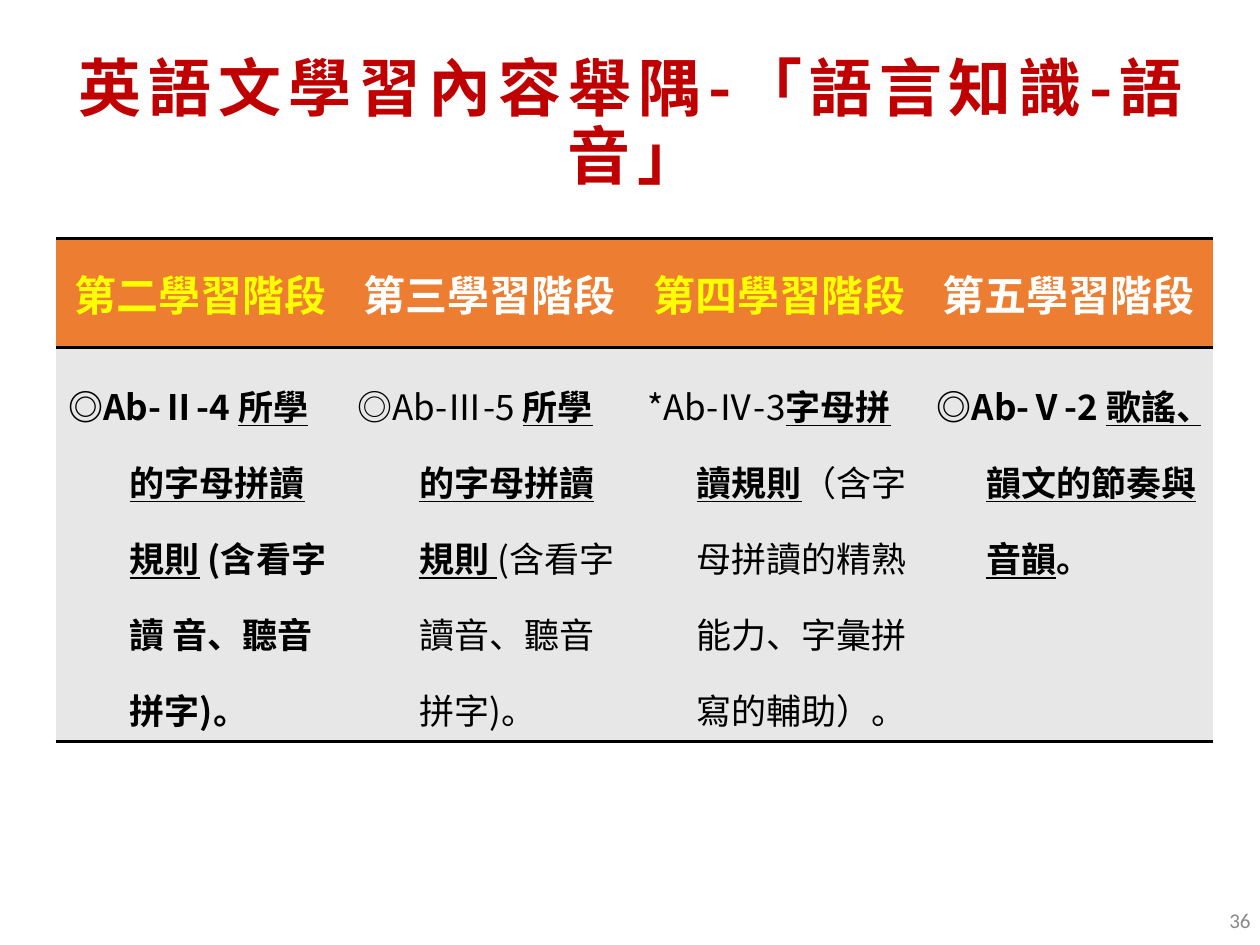
from dataclasses import dataclass

from lxml import etree
from pptx import Presentation
from pptx.dml.color import RGBColor
from pptx.enum.text import MSO_ANCHOR, MSO_AUTO_SIZE, PP_ALIGN
from pptx.oxml.ns import qn
from pptx.util import Cm, Pt

CENTER, RIGHT = PP_ALIGN.CENTER, PP_ALIGN.RIGHT
MIDDLE, NO_FIT = MSO_ANCHOR.MIDDLE, MSO_AUTO_SIZE.NONE
CJK = "Noto Sans CJK SC"
NO_STYLE = "{2D5ABB26-0587-4C30-8999-92F81FD0307C}"


@dataclass
class Stage:
    name: str
    color: str
    code: str
    key: str
    rest: str
    bold: bool
    indent: float


STAGES = [
    Stage("第二學習階段", "FFFF00", "◎Ab-Ⅱ-4 ", "所學的字母拼讀規則",
          " (含看字讀 音、聽音拼字)。", True, 1.24),
    Stage("第三學習階段", "FFFFFF", "◎Ab-Ⅲ-5 ", "所學的字母拼讀規則 ",
          "(含看字讀音、聽音拼字)。", False, 1.24),
    Stage("第四學習階段", "FFFF00", "*Ab-Ⅳ-3", "字母拼讀規則",
          "（含字母拼讀的精熟 能力、字彙拼寫的輔助）。", False, 1),
    Stage("第五學習階段", "FFFFFF", "◎Ab-Ⅴ-2 ", "歌謠、韻文的節奏與音韻",
          "。", True, 1),
]


def rgb(value: str) -> RGBColor:
    """Turn a hex string into a colour."""
    return RGBColor.from_string(value)


def add_text(p, text: str, size=20, color="000000", bold=False,
             underline=False, font=CJK, spacing=0) -> None:
    """Add one formatted run to a paragraph."""
    r = p.add_run()
    r.text = text
    f = r.font
    f.size, f.bold, f.underline, f.name = Pt(size), bold, underline, font
    f.color.rgb = rgb(color)
    rPr = r._r.get_or_add_rPr()
    etree.SubElement(rPr, qn("a:ea")).set("typeface", font)
    if spacing:
        rPr.set("spc", str(spacing * 100))


def format_cell(cell, fill: str, sides: tuple) -> None:
    """Draw black rules on the given sides, then fill the cell."""
    tcPr = cell._tc.get_or_add_tcPr()
    for side in sides:
        ln = etree.SubElement(tcPr, qn(f"a:ln{side}"), w=str(Pt(2)))
        solid = etree.SubElement(ln, qn("a:solidFill"))
        etree.SubElement(solid, qn("a:srgbClr"), val="000000")
    cell.fill.solid()
    cell.fill.fore_color.rgb = rgb(fill)


def add_title(s, text: str) -> None:
    """Place and format the title placeholder."""
    sp = s.shapes.title
    sp.left, sp.top, sp.width, sp.height = Cm(0.43), Cm(1.22), Cm(24.71), Cm(2.59)
    tf = sp.text_frame
    tf.auto_size, tf.vertical_anchor, tf.word_wrap = NO_FIT, MIDDLE, True
    p = tf.paragraphs[0]
    p.alignment, p.line_spacing, p.space_before = CENTER, 0.9, Pt(0)
    add_text(p, text, size=36, color="C00000", bold=True, spacing=4)


def add_stage(table, col: int, stage: Stage) -> None:
    """Fill one column with a learning stage."""
    head, body = table.cell(0, col), table.cell(1, col)
    format_cell(head, "ED7D31", ("T", "B"))
    head.vertical_anchor = MIDDLE
    p = head.text_frame.paragraphs[0]
    p.alignment = CENTER
    add_text(p, stage.name, size=24, color=stage.color, bold=True)

    format_cell(body, "E7E7E7", ("T", "B"))
    p = body.text_frame.paragraphs[0]
    p.line_spacing = 1.5
    pPr = p._p.get_or_add_pPr()
    pPr.set("marL", str(Cm(stage.indent)))
    pPr.set("indent", str(-Cm(stage.indent)))
    add_text(p, stage.code, bold=stage.bold)
    add_text(p, stage.key, bold=True, underline=True)
    add_text(p, stage.rest, bold=stage.bold)


def add_stages(s, stages: list[Stage]) -> None:
    """Add the table of learning stages."""
    table = s.shapes.add_table(2, len(stages), Cm(1.12), Cm(4.8),
                               Cm(23.34), Cm(10.13)).table
    table.first_row = table.horz_banding = False
    table._tbl.tblPr.find(qn("a:tableStyleId")).text = NO_STYLE
    table.rows[0].height, table.rows[1].height = Cm(2.21), Cm(7.92)
    for col, stage in enumerate(stages):
        add_stage(table, col, stage)


def add_page_number(s, number: str) -> None:
    """Add the page number at the lower right."""
    sp = s.shapes.add_textbox(Cm(19.74), Cm(18.03), Cm(5.72), Cm(1.02))
    tf = sp.text_frame
    tf.word_wrap, tf.vertical_anchor = True, MIDDLE
    p = tf.paragraphs[0]
    p.alignment = RIGHT
    add_text(p, number, size=12, color="898989", font="Calibri")


def main() -> None:
    """Build and save the slide."""
    prs = Presentation()
    prs.slide_width, prs.slide_height = Cm(25.4), Cm(19.05)
    s = prs.slides.add_slide(prs.slide_layouts[5])
    add_title(s, "英語文學習內容舉隅-「語言知識-語音」")
    add_stages(s, STAGES)
    add_page_number(s, "36")
    prs.save("out.pptx")


if __name__ == "__main__":
    main()
